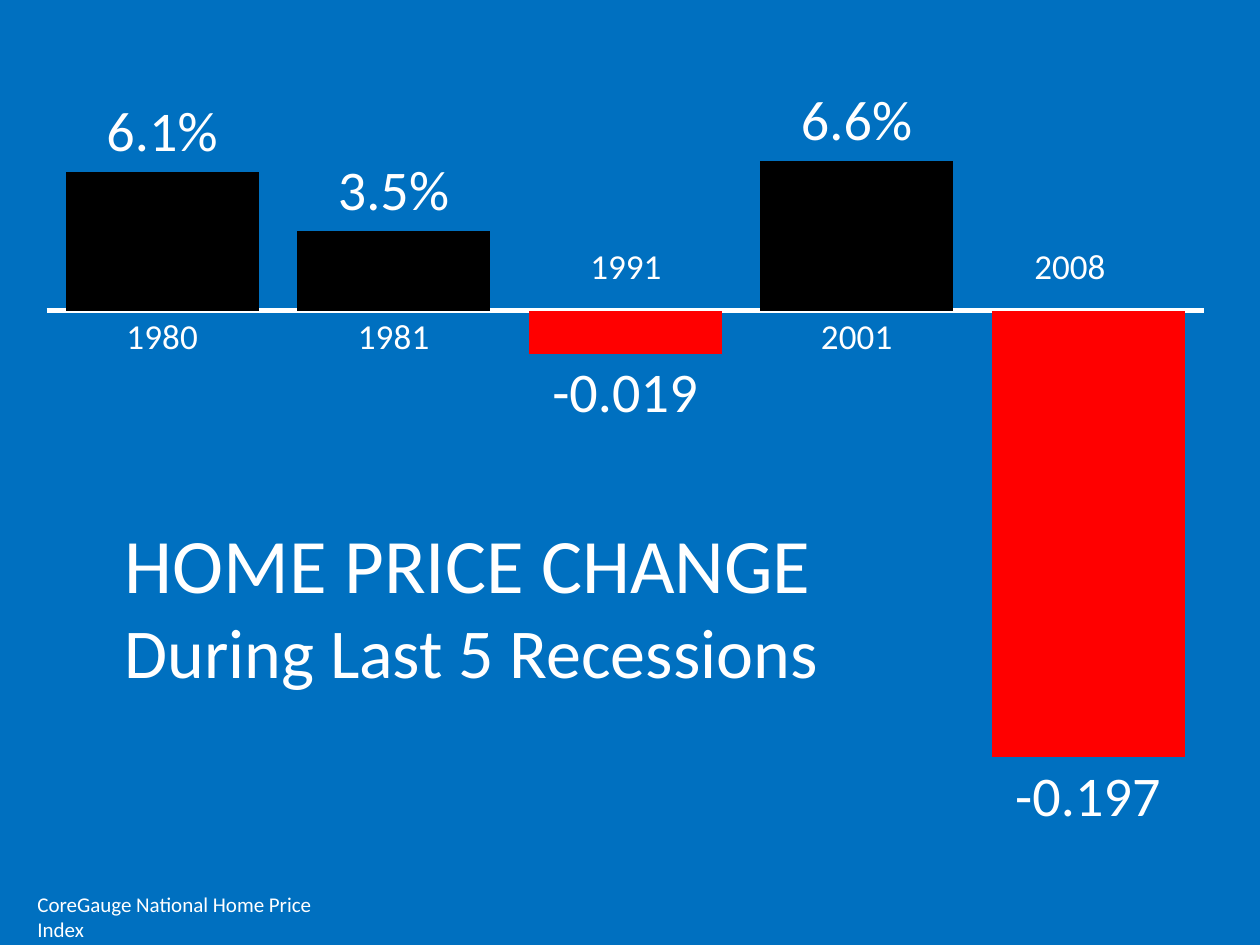
import collections

import pptx
import pptx.chart.data
import pptx.dml.color
import pptx.enum.chart
import pptx.enum.shapes
import pptx.enum.text
import pptx.oxml
import pptx.oxml.ns
import pptx.util

Box = collections.namedtuple("Box", "left top width height")
Theme = collections.namedtuple(
    "Theme", "font background gain loss text title subtitle value year source")
THEME = Theme("Calibri", "0070C0", "000000", "FF0000", "FFFFFF", 44, 40, 32, 20, 12)
EMU_PER_PX = 914400 / 126
CHANGES = [("1980", 0.061), ("1981", 0.035), ("", -0.019), ("2001", 0.066), ("", -0.197)]
PLOT = {"x": 0.018, "y": 0.024, "w": 0.967, "h": 0.953}


def px(length):
    return pptx.util.Emu(round(length * EMU_PER_PX))


def emu(box):
    return [px(length) for length in box]


def inside(parent, left, top, width, height):
    return Box(parent.left + left, parent.top + top, width, height)


def apply(target, values):
    for name, value in values.items():
        setattr(target, name, value)


def paint(fill, color):
    fill.solid()
    fill.fore_color.rgb = pptx.dml.color.RGBColor.from_string(color)


def style_font(font, size):
    apply(font, {"name": THEME.font, "size": pptx.util.Pt(size)})
    font.color.rgb = pptx.dml.color.RGBColor.from_string(THEME.text)


def write_lines(shape, lines, wrap):
    frame = shape.text_frame
    apply(frame, {"word_wrap": wrap,
                  "auto_size": pptx.enum.text.MSO_AUTO_SIZE.SHAPE_TO_FIT_TEXT,
                  "vertical_anchor": pptx.enum.text.MSO_ANCHOR.TOP})
    for index, (text, size) in enumerate(lines):
        paragraph = frame.add_paragraph() if index else frame.paragraphs[0]
        paragraph.alignment = pptx.enum.text.PP_ALIGN.LEFT
        run = paragraph.add_run()
        run.text = text
        style_font(run.font, size)


def add_caption(slide, box, text, size, wrap=False):
    write_lines(slide.shapes.add_textbox(*emu(box)), [(text, size)], wrap)


def add_background(slide, box):
    shape = slide.shapes.add_shape(pptx.enum.shapes.MSO_SHAPE.RECTANGLE, *emu(box))
    shape.shadow.inherit = False
    paint(shape.fill, THEME.background)
    shape.line.fill.background()


def set_plot_layout(chart):
    plot_area = chart._chartSpace.chart.plotArea
    for layout in plot_area.findall(pptx.oxml.ns.qn("c:layout")):
        plot_area.remove(layout)
    sizes = "".join(f'<c:{name} val="{value}"/>' for name, value in PLOT.items())
    plot_area.insert(0, pptx.oxml.parse_xml(
        f'<c:layout {pptx.oxml.ns.nsdecls("c")}><c:manualLayout>'
        '<c:layoutTarget val="inner"/><c:xMode val="edge"/><c:yMode val="edge"/>'
        f'{sizes}</c:manualLayout></c:layout>'))


def format_axes(chart):
    no_tick = pptx.enum.chart.XL_TICK_MARK.NONE
    axis_values = {"has_major_gridlines": False, "major_tick_mark": no_tick,
                   "minor_tick_mark": no_tick}
    years, changes = chart.category_axis, chart.value_axis
    for axis in (years, changes):
        apply(axis, axis_values)
    style_font(years.tick_labels.font, THEME.year)
    paint(years.format.line.fill, THEME.text)
    years.format.line.width = pptx.util.Pt(3)
    apply(changes, {"visible": False, "minimum_scale": -0.25, "maximum_scale": 0.1})
    apply(changes.tick_labels, {"number_format": "0.0%", "number_format_is_linked": False})


def format_bars(chart):
    outside = pptx.enum.chart.XL_LABEL_POSITION.OUTSIDE_END
    plot = chart.plots[0]
    apply(plot, {"gap_width": 20, "overlap": -27, "vary_by_categories": False})
    series = plot.series[0]
    series.invert_if_negative = False
    paint(series.format.fill, THEME.background)
    labels = series.data_labels
    apply(labels, {"show_value": True, "position": outside,
                   "number_format": "0.0%", "number_format_is_linked": False})
    style_font(labels.font, THEME.value)
    for index, (year, change) in enumerate(CHANGES):
        point = series.points[index]
        paint(point.format.fill, THEME.loss if change < 0 else THEME.gain)
        if change < 0:
            run = point.data_label.text_frame.paragraphs[0].add_run()
            run.text = str(change)
            style_font(run.font, THEME.value)
            point.data_label.position = outside


def add_price_chart(slide, box):
    years, changes = zip(*CHANGES)
    data = pptx.chart.data.CategoryChartData(number_format="0.0%")
    data.categories = years
    data.add_series("Series 1", changes)
    chart = slide.shapes.add_chart(
        pptx.enum.chart.XL_CHART_TYPE.COLUMN_CLUSTERED, *emu(box), data).chart
    apply(chart, {"has_legend": False, "has_title": False})
    apply(chart.font, {"name": THEME.font, "size": pptx.util.Pt(10)})
    set_plot_layout(chart)
    format_axes(chart)
    format_bars(chart)
    for year, left in (("1991", 553), ("2008", 997)):
        add_caption(slide, inside(box, left, 174, 97, 55), year, THEME.year)


def add_title(slide, box):
    title = slide.shapes.title
    apply(title, dict(zip(Box._fields, emu(box))))
    write_lines(title, [("HOME PRICE CHANGE", THEME.title),
                        ("During Last 5 Recessions", THEME.subtitle)], False)
    title.element.getparent().append(title.element)


def build_slide(presentation, box):
    slide = presentation.slides.add_slide(presentation.slide_layouts[5])
    add_background(slide, box)
    add_price_chart(slide, inside(box, 25, 64, 1197, 833))
    add_title(slide, inside(box, 112, 510, 737, 190))
    add_caption(slide, inside(box, 25, 885, 347, 38),
                "CoreGauge National Home Price Index", THEME.source, True)


def main():
    page = Box(0, 0, 1260, 945)
    presentation = pptx.Presentation()
    apply(presentation, {"slide_width": px(page.width), "slide_height": px(page.height)})
    build_slide(presentation, page)
    presentation.save("out.pptx")


if __name__ == "__main__":
    main()
